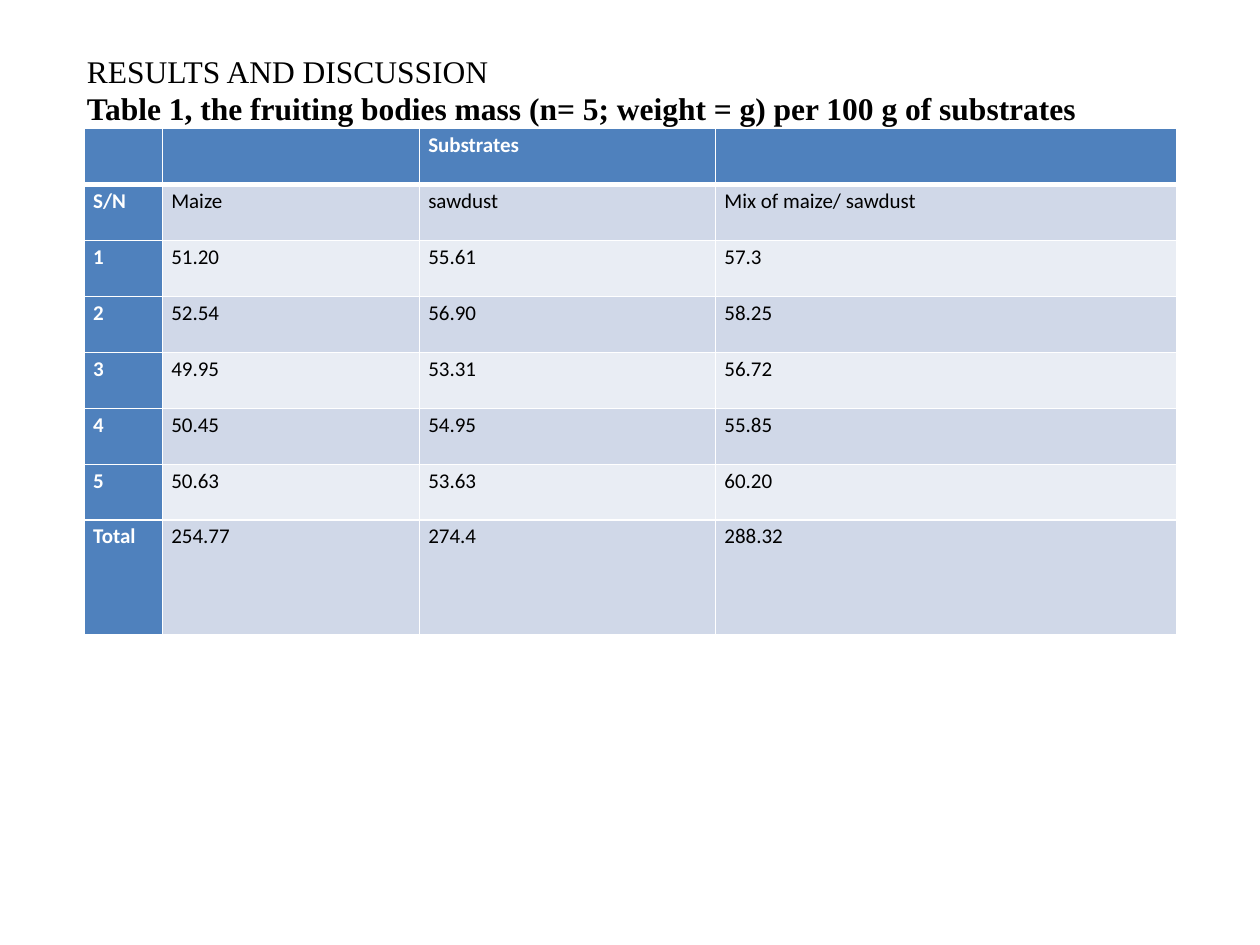
from lxml import etree
from pptx import Presentation
from pptx import util as u
from pptx.dml.color import RGBColor
from pptx.enum import text
from pptx.oxml.ns import qn

BLUE, DARK_BAND, LIGHT_BAND = "4F81BD", "D0D8E8", "E9EDF4"
WHITE, BLACK = "FFFFFF", "000000"

HEADING = [
    ("RESULTS AND DISCUSSION", False),
    ("Table 1, the fruiting bodies mass (n= 5; weight = g) per 100 g of substrates", True),
]
COLUMN_WIDTHS = [0.62, 2.04, 2.35, 3.66]
MASS_ROWS = [
    ["", "", "Substrates", ""],
    ["S/N", "Maize", "sawdust", "Mix of maize/ sawdust"],
    ["1", "51.20", "55.61", "57.3"],
    ["2", "52.54", "56.90", "58.25"],
    ["3", "49.95", "53.31", "56.72"],
    ["4", "50.45", "54.95", "55.85"],
    ["5", "50.63", "53.63", "60.20"],
    ["Total", "254.77", "274.4", "288.32"],
]
# The total row is taller; the others share the remaining height equally
TABLE_HEIGHT, TOTAL_HEIGHT = 4.02, 0.91
EQUAL_ROWS = len(MASS_ROWS) - 1
ROW_HEIGHTS = [(TABLE_HEIGHT - TOTAL_HEIGHT) / EQUAL_ROWS] * EQUAL_ROWS + [TOTAL_HEIGHT]


def color(value):
    return RGBColor.from_string(value)


class SlideBuilder:
    heading_font = "Times New Roman"
    table_font = "Calibri"

    def __init__(self, slide):
        self.slide = slide

    def style(self, paragraph, name, size, ink, bold):
        font = paragraph.font
        font.name, font.size, font.bold = name, u.Pt(size), bold
        font.color.rgb = color(ink)

    def heading(self, lines, left, top, width, height):
        shape = self.slide.shapes.title
        shape.left, shape.top = u.Inches(left), u.Inches(top)
        shape.width, shape.height = u.Inches(width), u.Inches(height)
        frame = shape.text_frame
        frame.word_wrap = True
        frame.auto_size = text.MSO_AUTO_SIZE.NONE
        frame.vertical_anchor = text.MSO_ANCHOR.TOP
        frame.text = "\n".join(line for line, _ in lines)
        for paragraph, (_, bold) in zip(frame.paragraphs, lines):
            paragraph.alignment = text.PP_ALIGN.LEFT
            paragraph.line_spacing = 1.0
            self.style(paragraph, self.heading_font, 18, BLACK, bold)

    def borders(self, cell, top=1, bottom=1):
        properties = cell._tc.get_or_add_tcPr()
        for side, points in (("L", 1), ("R", 1), ("T", top), ("B", bottom)):
            line = etree.SubElement(properties, qn(f"a:ln{side}"), w=str(u.Pt(points)))
            fill = etree.SubElement(line, qn("a:solidFill"))
            etree.SubElement(fill, qn("a:srgbClr"), val=WHITE)

    def cell(self, cell, value, fill, is_header):
        cell.fill.solid()
        cell.fill.fore_color.rgb = color(fill)
        cell.margin_left = cell.margin_right = u.Inches(0.07)
        cell.margin_top = cell.margin_bottom = 0
        cell.text = value
        paragraph = cell.text_frame.paragraphs[0]
        paragraph.alignment = text.PP_ALIGN.JUSTIFY
        paragraph.line_spacing = 1.15
        self.style(paragraph, self.table_font, 12, WHITE if is_header else BLACK, is_header)

    def table(self, rows, widths, heights, left, top):
        table = self.slide.shapes.add_table(
            len(rows), len(widths), u.Inches(left), u.Inches(top),
            u.Inches(sum(widths)), u.Inches(sum(heights))).table
        table.first_col = True
        for column, width in zip(table.columns, widths):
            column.width = u.Inches(width)
        for r, values in enumerate(rows):
            table.rows[r].height = u.Inches(heights[r])
            band = DARK_BAND if r % 2 else LIGHT_BAND
            for c, value in enumerate(values):
                is_header = r == 0 or c == 0
                cell = table.cell(r, c)
                # The rule under the header row is thicker
                self.borders(cell, top=3 if r == 1 else 1, bottom=3 if r == 0 else 1)
                self.cell(cell, value, BLUE if is_header else band, is_header)


def main():
    presentation = Presentation()
    presentation.slide_width, presentation.slide_height = u.Inches(10), u.Inches(7.5)
    title_only = presentation.slide_layouts[5]
    builder = SlideBuilder(presentation.slides.add_slide(title_only))

    # Section title and table caption
    builder.heading(HEADING, 0.59, 0.36, 9.13, 1.31)

    # Mass of fruiting bodies by substrate
    builder.table(MASS_ROWS, COLUMN_WIDTHS, ROW_HEIGHTS, 0.67, 1.02)

    presentation.save("out.pptx")


if __name__ == "__main__":
    main()
